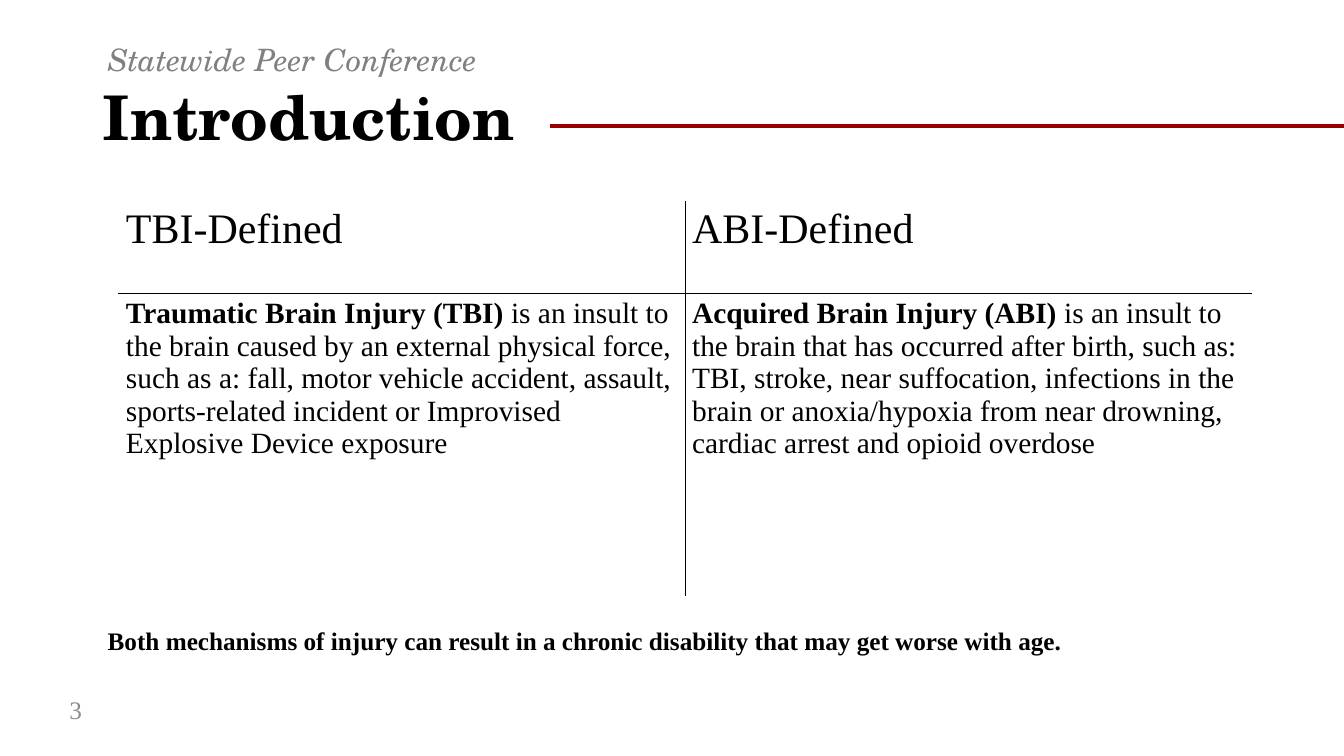
from lxml import etree
from pptx import Presentation
from pptx.dml.color import RGBColor as RGB
from pptx.enum.shapes import MSO_CONNECTOR as Line
from pptx.enum.text import MSO_ANCHOR as Anchor, MSO_AUTO_SIZE as Auto, PP_ALIGN as Align
from pptx.oxml import parse_xml
from pptx.oxml.ns import nsdecls, qn
from pptx.util import Inches, Pt

TITLE = "Introduction"
EVENT = "Statewide Peer Conference"
HEADS = ["TBI-Defined", "ABI-Defined"]
TEXTS = [
    ("Traumatic Brain Injury (TBI) ",
     "is an insult to the brain caused by an external physical force, such as a: "
     "fall, motor vehicle accident, assault, sports-related incident or "
     "Improvised Explosive Device exposure"),
    ("Acquired Brain Injury (ABI) ",
     "is an insult to the brain that has occurred after birth, such as: TBI, "
     "stroke, near suffocation, infections in the brain or anoxia/hypoxia from "
     "near drowning, cardiac arrest and opioid overdose"),
]
NOTE = "Both mechanisms of injury can result in a chronic disability that may get worse with age."
PAGE = "3"

SERIF, SCHOOL = "Times New Roman", "TeX Gyre Schola"
BLACK, WHITE = RGB(0, 0, 0), RGB(255, 255, 255)
GRAY, PALE, RED = RGB(0x80, 0x80, 0x80), RGB(0x8C, 0x8C, 0x8C), RGB(0x98, 0, 0)
ROWS = [0.91, 3.01]


def style(para, size, face, color, bold=False, italic=False):
    """Set the font of a paragraph."""
    font = para.font
    font.size, font.name, font.color.rgb = Pt(size), face, color
    font.bold, font.italic = bold, italic


def place(shape, left, top, width, height, anchor):
    """Move a shape and return its first paragraph."""
    shape.left, shape.top = Inches(left), Inches(top)
    shape.width, shape.height = Inches(width), Inches(height)
    frame = shape.text_frame
    frame.word_wrap, frame.auto_size = True, Auto.NONE
    frame.vertical_anchor = anchor
    return frame.paragraphs[0]


def add_text(slide, text, box, anchor):
    """Add a text box and return its paragraph."""
    shape = slide.shapes.add_textbox(*map(Inches, box))
    para = place(shape, *box, anchor)
    para.text = text
    return para


def edge(cell, row, col):
    """Draw black inner and white outer borders on a cell."""
    props = cell._tc.get_or_add_tcPr()
    inner = {"L": col == 1, "R": col == 0, "T": row == 1, "B": row == 0}
    for side, dark in inner.items():
        color = BLACK if dark else WHITE
        props.append(parse_xml(
            f'<a:ln{side} {nsdecls("a")} w="{Pt(1)}"><a:solidFill>'
            f'<a:srgbClr val="{color}"/></a:solidFill></a:ln{side}>'))


def add_grid(slide):
    """Add the table of definitions."""
    shape = slide.shapes.add_table(
        2, 2, Inches(1.18), Inches(2), Inches(11.23), Inches(sum(ROWS)))
    table = shape.table
    table.first_row = table.horz_banding = False
    for row, height in enumerate(ROWS):
        table.rows[row].height = Inches(height)
        for col in range(2):
            cell = table.cell(row, col)
            edge(cell, row, col)
            cell.fill.background()
            cell.margin_left = cell.margin_right = Inches(0.07)
            cell.margin_top = cell.margin_bottom = Inches(0.04)
            para = cell.text_frame.paragraphs[0]
            if row == 0:
                para.text = HEADS[col]
                style(para, 30, SERIF, BLACK)
            else:
                for part, bold in zip(TEXTS[col], (True, False)):
                    run = para.add_run()
                    run.text = part
                    run.font.bold = bold
                style(para, 21, SERIF, BLACK)


def main():
    """Build the slide."""
    deck = Presentation()
    deck.slide_width, deck.slide_height = Inches(13.33), Inches(7.5)
    slide = deck.slides.add_slide(deck.slide_layouts[1])
    head, body = slide.placeholders

    para = place(head, 0.92, 0.65, 11.5, 1.09, Anchor.MIDDLE)
    para.text, para.alignment, para.line_spacing = TITLE, Align.LEFT, 0.9
    style(para, 44, SCHOOL, BLACK, bold=True)

    para = add_text(slide, PAGE, (0.59, 6.84, 0.59, 0.4), Anchor.MIDDLE)
    style(para, 18, SERIF, PALE)

    para = place(body, 0.97, 0.4, 11.45, 0.38, Anchor.TOP)
    para.text, para.line_spacing, para.space_before = EVENT, 0.9, Pt(0)
    props = para._p.get_or_add_pPr()
    props.set("marL", "0")
    props.set("indent", "0")
    etree.SubElement(props, qn("a:buNone"))
    style(para, 22, SCHOOL, GRAY, italic=True)

    rule = slide.shapes.add_connector(
        Line.STRAIGHT, Inches(5.46), Inches(1.25), deck.slide_width, Inches(1.25))
    rule.line.color.rgb, rule.line.width = RED, Pt(2.25)
    etree.SubElement(rule._element.spPr, qn("a:effectLst"))

    add_grid(slide)

    para = add_text(slide, NOTE, (0.97, 6.15, 9.66, 0.4), Anchor.TOP)
    para.alignment = Align.CENTER
    style(para, 18, SERIF, BLACK, bold=True)

    deck.save("out.pptx")


if __name__ == "__main__":
    main()
